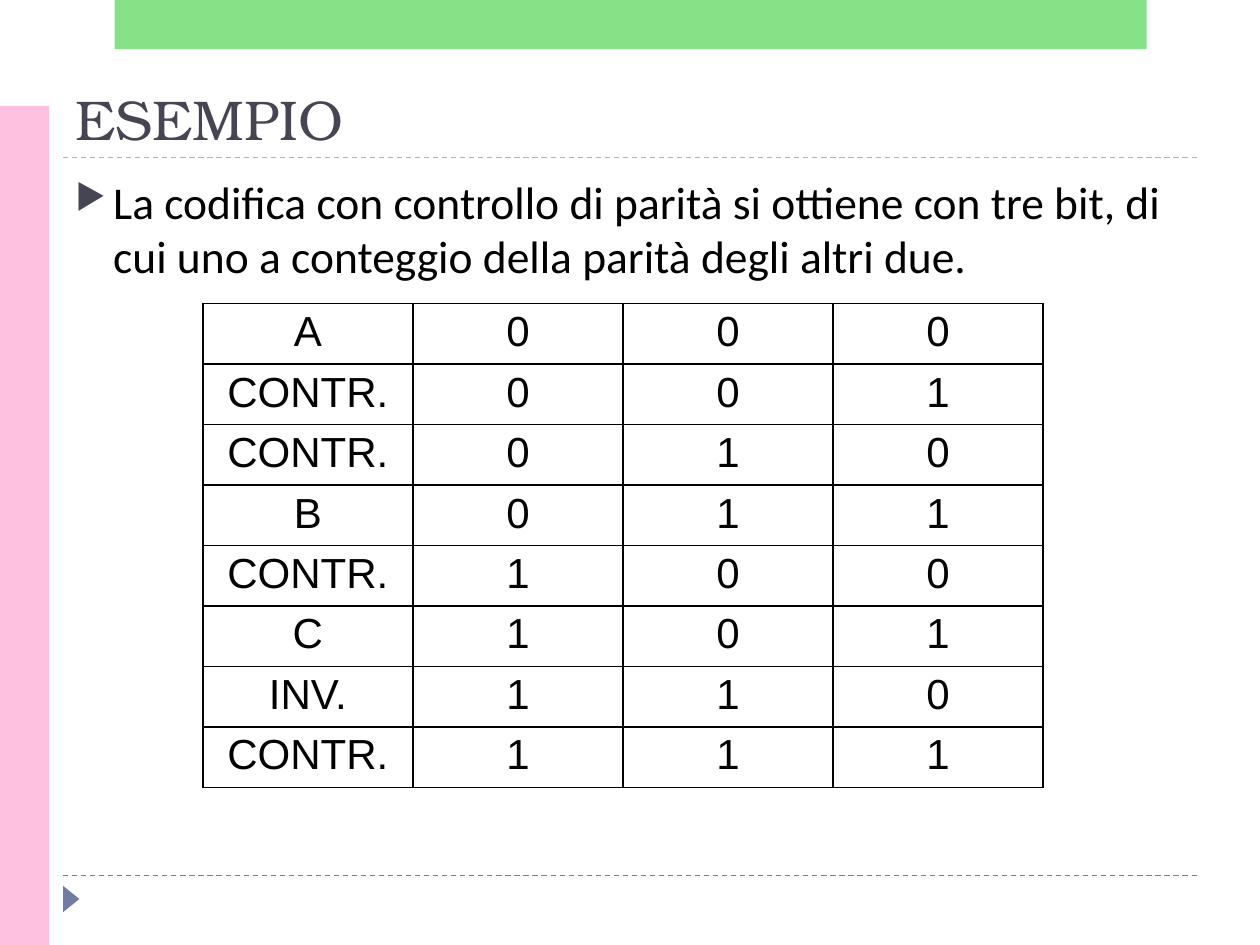
from dataclasses import dataclass
from itertools import product

from lxml import etree
from pptx import Presentation
from pptx import util as u
from pptx.dml.color import RGBColor
from pptx.enum import dml, shapes, text
from pptx.oxml.ns import qn

LABELS = ["A", "CONTR.", "CONTR.", "B", "CONTR.", "C", "INV.", "CONTR."]


@dataclass(frozen=True)
class Theme:
    dark: str = "464653"
    accent: str = "727CA3"
    rule: str = "9FB8CD"
    pink: str = "FFC1E0"
    green: str = "62D862"
    black: str = "000000"
    white: str = "FFFFFF"
    title_font: str = "TeX Gyre Bonum"
    body_font: str = "Calibri"
    table_font: str = "Arial"
    title_size: int = 32
    body_size: int = 26
    table_size: int = 24


def rgb(value):
    return RGBColor.from_string(value)


def sub(parent, tag, **attrs):
    return etree.SubElement(parent, qn(tag), attrs)


def write(tf, words, *, font, size, color, align=text.PP_ALIGN.LEFT):
    p = tf.paragraphs[0]
    p.alignment = align
    r = p.add_run()
    r.text = words
    r.font.name, r.font.size = font, u.Pt(size)
    r.font.color.rgb = rgb(color)
    return p


class Deck:
    """Places elements on a grid of 20 columns by 15 rows."""
    COLS, ROWS = 20, 15

    def __init__(self, theme):
        self.theme = theme
        self.prs = Presentation()
        self.prs.slide_width, self.prs.slide_height = u.Inches(10), u.Inches(7.5)
        self.s = self.prs.slides.add_slide(self.prs.slide_layouts[6])
        self.s.background.fill.solid()
        self.s.background.fill.fore_color.rgb = rgb(theme.white)

    def x(self, cols):
        return round(self.prs.slide_width * cols / self.COLS)

    def y(self, rows):
        return round(self.prs.slide_height * rows / self.ROWS)

    def box(self, left, top, width, height):
        return self.x(left), self.y(top), self.x(width), self.y(height)

    def shape(self, kind, area, color, rotation=0, alpha=None):
        sp = self.s.shapes.add_shape(kind, *self.box(*area))
        sp.shadow.inherit = False
        sp.rotation = rotation
        sp.fill.solid()
        sp.fill.fore_color.rgb = rgb(color)
        sp.line.fill.background()
        if alpha is not None:
            clr = sp.fill._xPr.find(".//" + qn("a:srgbClr"))
            sub(clr, "a:alpha", val=str(alpha * 1000))

    def dashed_rule(self, row, color):
        line = self.s.shapes.add_connector(
            shapes.MSO_CONNECTOR.STRAIGHT, self.x(1), self.y(row), self.x(19), self.y(row))
        line.line.color.rgb = rgb(color)
        line.line.width = u.Pt(0.75)
        line.line.dash_style = dml.MSO_LINE.DASH
        sub(line._element.spPr, "a:effectLst")

    def textbox(self, area, words, anchor=text.MSO_ANCHOR.TOP, **style):
        tf = self.s.shapes.add_textbox(*self.box(*area)).text_frame
        tf.word_wrap = True
        tf.vertical_anchor = anchor
        return write(tf, words, **style)

    def bullet(self, p, char, color, percent, indent):
        pPr = p._p.get_or_add_pPr()
        pPr.set("marL", str(u.Inches(indent)))
        pPr.set("indent", str(-u.Inches(indent)))
        sub(sub(pPr, "a:buClr"), "a:srgbClr", val=color)
        sub(pPr, "a:buSzPct", val=str(percent * 1000))
        sub(pPr, "a:buChar", char=char)

    def border(self, cell):
        tcPr = cell._tc.get_or_add_tcPr()
        for i, side in enumerate(("a:lnL", "a:lnR", "a:lnT", "a:lnB")):
            ln = etree.Element(qn(side), w=str(u.Pt(1)))
            sub(sub(ln, "a:solidFill"), "a:srgbClr", val=self.theme.black)
            tcPr.insert(i, ln)

    def table(self, area, rows):
        t = self.theme
        frame = self.s.shapes.add_table(len(rows), len(rows[0]), *self.box(*area))
        table = frame.table
        table.first_row = table.horz_banding = False
        for i, row in enumerate(rows):
            for j, words in enumerate(row):
                cell = table.cell(i, j)
                cell.fill.background()
                cell.margin_top = cell.margin_bottom = u.Inches(0.04)
                write(cell.text_frame, words, font=t.table_font, size=t.table_size,
                      color=t.black, align=text.PP_ALIGN.CENTER)
                self.border(cell)


def main():
    t = Theme()
    deck = Deck(t)
    kind = shapes.MSO_SHAPE

    # Frame: rules, corner marker and colour bands
    deck.dashed_rule(13.9, t.accent)
    deck.dashed_rule(2.5, t.rule)
    deck.shape(kind.ISOSCELES_TRIANGLE, (0.92, 14.14, 0.42, 0.26), t.accent, rotation=90)
    deck.shape(kind.RECTANGLE, (0, 1.68, 0.78, 13.32), t.pink)
    deck.shape(kind.RECTANGLE, (1.82, 0, 16.38, 0.78), t.green, alpha=76)

    # Title and statement
    deck.textbox((1, 1.1, 18, 1.4), "ESEMPIO", anchor=text.MSO_ANCHOR.BOTTOM,
                 font=t.title_font, size=t.title_size, color=t.dark)
    p = deck.textbox((1, 2.66, 18, 10.8),
                     "La codifica con controllo di parità si ottiene con tre bit, "
                     "di cui uno a conteggio della parità degli altri due.",
                     font=t.body_font, size=t.body_size, color=t.black)
    deck.bullet(p, "▶", t.dark, percent=76, indent=0.3)

    # Every three-bit code with its meaning
    codes = product("01", repeat=3)
    deck.table((3.22, 4.82, 13.34, 7.56),
               [(label, *bits) for label, bits in zip(LABELS, codes)])

    deck.prs.save("out.pptx")


if __name__ == "__main__":
    main()
